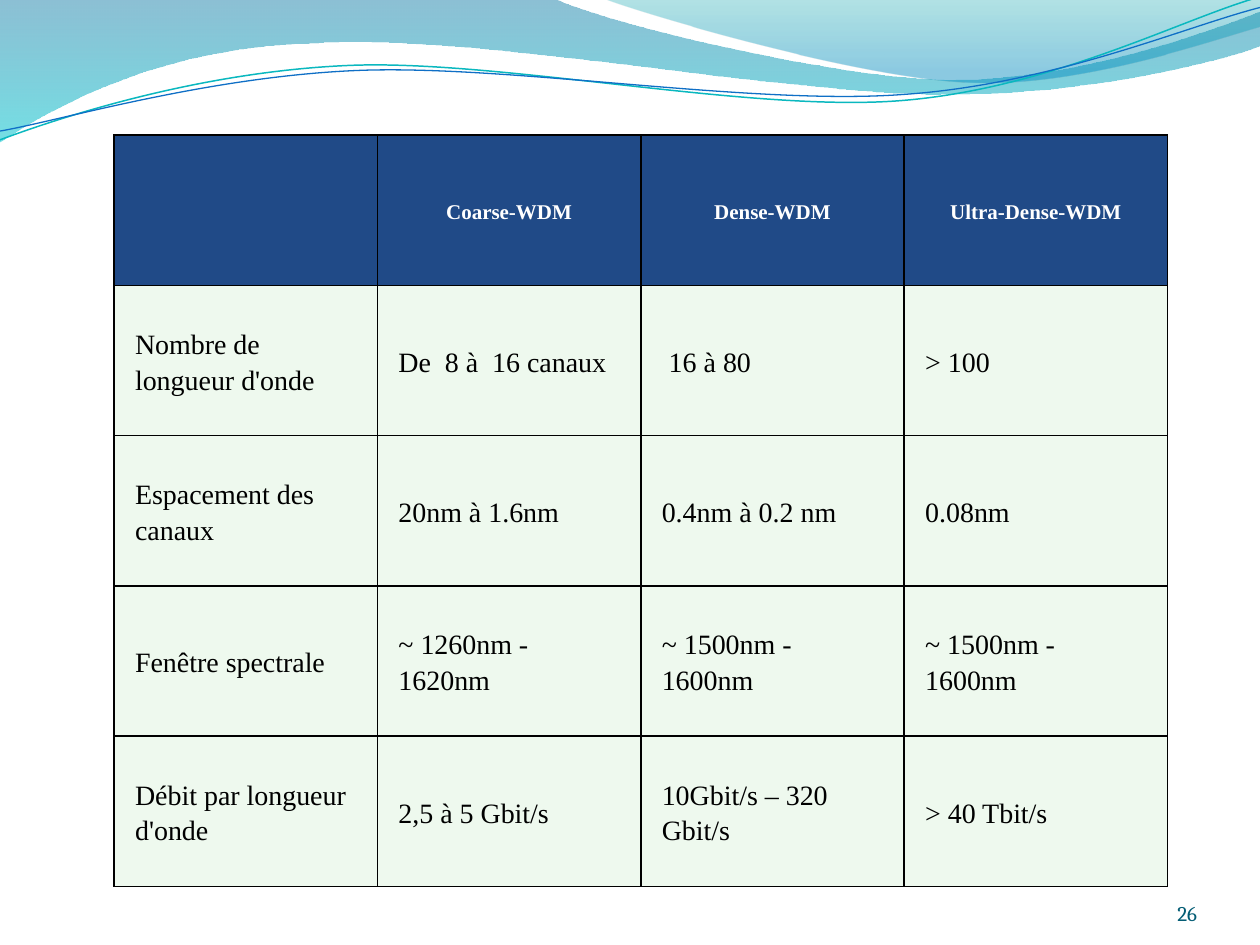
from dataclasses import dataclass
from math import cos, radians, sin

from lxml import etree
from pptx import Presentation
from pptx.dml.color import RGBColor
from pptx.enum.text import MSO_ANCHOR, PP_ALIGN
from pptx.oxml.ns import qn
from pptx.util import Pt

MIDDLE, BOTTOM = MSO_ANCHOR.MIDDLE, MSO_ANCHOR.BOTTOM
LEFT, CENTER, RIGHT = PP_ALIGN.LEFT, PP_ALIGN.CENTER, PP_ALIGN.RIGHT


@dataclass(frozen=True)
class Theme:
    body_font: str = "Times New Roman"
    number_font: str = "Cambria"
    head_size: int = 12
    body_size: int = 16
    number_size: int = 12
    head_text: str = "FFFFFF"
    body_text: str = "000000"
    number_text: str = "045D75"
    head_fill: str = "204A87"
    body_fill: str = "EEF9EE"
    border: str = "000000"
    teal_line: str = "0AB8BF"
    blue_line: str = "0F6FC6"
    # Gradient stops: position, colour, opacity in percent
    band: tuple = ((0, "0074A1", 45), (1, "00C6CF", 55))
    fold: tuple = ((0, "00A1A9", 30), (0.8, "008BBF", 45))


T = Theme()

# Waves in points: two numbers are a straight step, six a Bezier step
BAND = [(0, -0.7), (316.8, -0.7),
        (342.7, 12.2, 478.1, 45.4, 545.8, 45.4),
        (614.2, 45.4, 689.8, 18.7, 720, 6.5), (720.7, 25.9),
        (707.8, 31.7, 626.4, 54.7, 537.1, 54),
        (447.8, 54, 275, 20.2, 185, 24.5),
        (92.9, 25.9, 33.1, 59.8, -0.7, 81.4), (0, -0.7)]
FOLD = [(344.9, -0.7), (366.5, 7.9, 491, 44.6, 553.7, 46.8),
        (616.3, 49.7, 691.9, 23, 720, 15.1), (720, 0), (344.9, -0.7)]
TEAL = [(0, 79.9), (34.6, 67, 113.8, 41, 199.4, 37.4),
        (284.4, 33.8, 427, 64.1, 513.4, 57.6),
        (599.8, 51.1, 675.4, 10.8, 718.6, -1.4)]
BLUE = [(0, 74.9), (33.8, 69.1, 118.1, 43.9, 203.8, 40.3),
        (290.2, 36.7, 429.8, 60.5, 516.2, 54),
        (601.9, 48.2, 677.5, 15.1, 720, 4.3)]
TILT = 2.7  # degrees by which both lines are turned to the left

ROWS = [
    ["", "Coarse-WDM", "Dense-WDM", "Ultra-Dense-WDM"],
    ["Nombre de longueur d'onde", "De  8 à  16 canaux", " 16 à 80", "> 100"],
    ["Espacement des canaux", "20nm à 1.6nm", "0.4nm à 0.2 nm", "0.08nm"],
    ["Fenêtre spectrale", "~ 1260nm - 1620nm", "~ 1500nm - 1600nm",
     "~ 1500nm - 1600nm"],
    ["Débit par longueur d'onde", "2,5 à 5 Gbit/s", "10Gbit/s – 320 Gbit/s",
     "> 40 Tbit/s"],
]


def rgb(code):
    return RGBColor.from_string(code)


def add_run(p, text, font, size, color, bold=False):
    r = p.add_run()
    r.text = text
    r.font.name, r.font.size, r.font.bold = font, Pt(size), bold
    r.font.color.rgb = rgb(color)


def level(point, center):
    """Undo the tilt of a point around a center."""
    a = radians(TILT)
    dx, dy = point[0] - center[0], point[1] - center[1]
    return (center[0] + dx * cos(a) - dy * sin(a),
            center[1] + dx * sin(a) + dy * cos(a))


def add_wave(s, box, steps, center=None):
    """Draw a closed area, or a tilted open line if a center is given."""
    x, y = box[:2]
    pts = [step[i:i + 2] for step in steps for i in range(0, len(step), 2)]
    if center:
        pts = [level(p, center) for p in pts]
    pts = [(Pt(x + px), Pt(y + py)) for px, py in pts]
    builder = s.shapes.build_freeform(*pts[0])
    builder.add_line_segments(pts[1:], close=center is None)
    sp = builder.convert_to_shape()
    sp.shadow.inherit = False
    if center:
        sp.rotation = 360 - TILT
    # Join each three points of a Bezier step into one curve
    path = next(sp._element.spPr.iter(qn("a:path")))
    lines = iter(path.findall(qn("a:lnTo")))
    for step in steps[1:]:
        first = next(lines)
        if len(step) == 6:
            curve = etree.Element(qn("a:cubicBezTo"))
            first.addprevious(curve)
            for line in (first, next(lines), next(lines)):
                curve.append(line[0])
                path.remove(line)
    return sp


def add_waves(s, box):
    # Translucent gradient areas
    for steps, stops in ((BAND, T.band), (FOLD, T.fold)):
        sp = add_wave(s, box, steps)
        sp.line.fill.background()
        sp.fill.gradient()
        sp.fill.gradient_angle = 270
        for stop, (pos, color, _) in zip(sp.fill.gradient_stops, stops):
            stop.position = pos
            stop.color.rgb = rgb(color)
        colors = sp._element.spPr.iter(qn("a:srgbClr"))
        for clr, (_, _, opacity) in zip(list(colors), stops):
            etree.SubElement(clr, qn("a:alpha"), val=str(opacity * 1000))
    # Thin lines
    for steps, center, color, width in (
            (TEAL, (359.3, 41.4), T.teal_line, 0.85),
            (BLUE, (359.6, 42.5), T.blue_line, 0.75)):
        sp = add_wave(s, box, steps, center)
        sp.fill.background()
        sp.line.color.rgb = rgb(color)
        sp.line.width = Pt(width)


def add_borders(cell):
    tcPr = cell._tc.get_or_add_tcPr()
    for side in ("a:lnL", "a:lnR", "a:lnT", "a:lnB"):
        ln = etree.SubElement(tcPr, qn(side), w=str(Pt(1)))
        fill = etree.SubElement(ln, qn("a:solidFill"))
        etree.SubElement(fill, qn("a:srgbClr"), val=T.border)


def add_wdm_table(s, box):
    table = s.shapes.add_table(len(ROWS), len(ROWS[0]), *map(Pt, box)).table
    table.first_row = table.horz_banding = False
    for i, row in enumerate(ROWS):
        head = i == 0
        size = T.head_size if head else T.body_size
        for j, text in enumerate(row):
            cell = table.cell(i, j)
            add_borders(cell)
            cell.fill.solid()
            cell.fill.fore_color.rgb = rgb(T.head_fill if head else T.body_fill)
            cell.vertical_anchor = MIDDLE
            cell.margin_left = cell.margin_right = Pt(12)
            cell.margin_top = cell.margin_bottom = Pt(2)
            if text:
                p = cell.text_frame.paragraphs[0]
                p.alignment = CENTER if head else LEFT
                p.line_spacing = 1.15
                add_run(p, text, T.body_font, size,
                        T.head_text if head else T.body_text, head)


def add_page_number(s, box, number):
    tf = s.shapes.add_textbox(*map(Pt, box)).text_frame
    tf.word_wrap = True
    tf.vertical_anchor = BOTTOM
    tf.margin_left = tf.margin_right = tf.margin_top = tf.margin_bottom = 0
    p = tf.paragraphs[0]
    p.alignment = RIGHT
    add_run(p, number, T.number_font, T.number_size, T.number_text)


def main():
    prs = Presentation()
    prs.slide_width, prs.slide_height = Pt(720), Pt(540)
    s = prs.slides.add_slide(prs.slide_layouts[6])
    add_waves(s, (0, 0, 720, 82))
    add_page_number(s, (624, 500.2, 60, 28.8), "26")
    add_wdm_table(s, (65.2, 77.2, 602, 429.4))
    prs.save("out.pptx")


if __name__ == "__main__":
    main()
